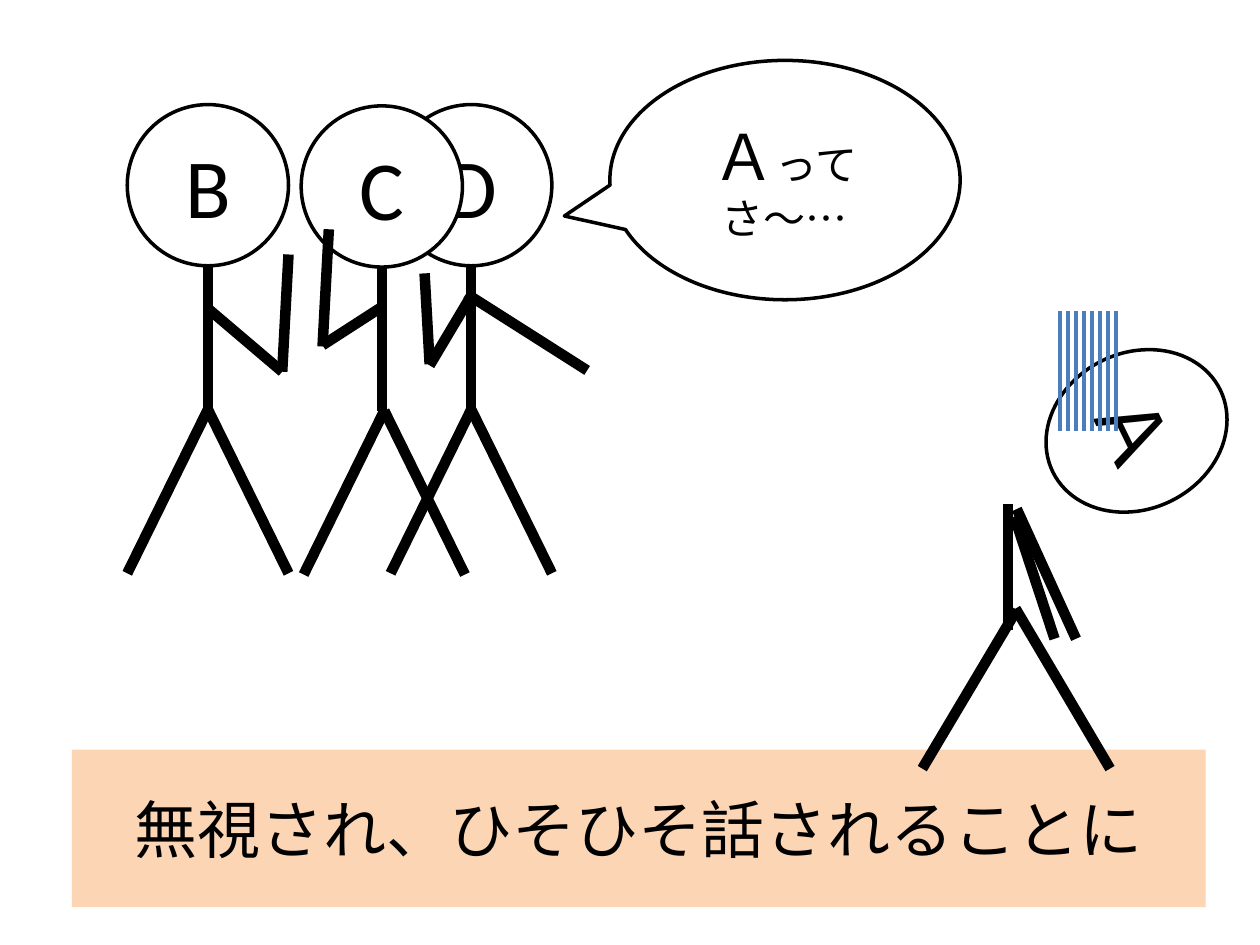
from lxml import etree
from pptx import Presentation
from pptx import util as u
from pptx.dml.color import RGBColor
from pptx.enum import shapes, text
from pptx.oxml import ns

COLORS = {"ink": "000000", "paper": "FFFFFF", "band": "FCD5B5", "gloom": "4B7EBC"}
FONT = "Calibri"
LIMB, OUTLINE, GLOOM = 6, 2, 2.25
HEAD = 1.28
BODY = 1.14
LEG_SPREAD, LEG_DROP = 0.64, 1.3

# Head left and top, hip x, and arms as joint-to-joint chains
WHISPERERS = {
    "D": (3.1, 0.83, 3.74, [[(3.72, 2.38), (3.41, 2.9)], [(3.37, 2.17), (3.41, 2.89)],
                            [(3.7, 2.33), (4.66, 2.94)]]),
    "B": (1.01, 0.83, 1.65, [[(1.64, 2.44), (2.24, 2.95)], [(2.29, 2.02), (2.24, 2.95)]]),
    "C": (2.39, 0.84, 3.05, [[(3.04, 2.43), (2.56, 2.74)], [(2.61, 1.82), (2.56, 2.75)]]),
}
OUTCAST_LIMBS = [
    [(8.07, 4.84), (7.32, 6.1)],
    [(8.06, 4.83), (8.81, 6.1)],
    [(8.05, 4.1), (8.37, 5.07)],
    [(8.07, 4.04), (8.54, 5.07)],
]
OUTCAST_SPINE = [
    [(8.06, 4.83), (8.04, 4.47), (8.03, 4.11), (8.07, 3.92)],
    [(8.07, 3.92), (8.11, 3.73), (8.27, 3.74), (8.32, 3.7)],
    [(8.32, 3.7), (8.37, 3.67), (8.37, 3.69), (8.37, 3.71)],
]


def color(name):
    return RGBColor.from_string(COLORS[name])


def set_line(item, name, width):
    item.line.color.rgb = color(name)
    item.line.width = u.Pt(width)


def add_line(page, start, end, name="ink", width=LIMB):
    ends = [u.Inches(value) for value in (*start, *end)]
    line = page.shapes.add_connector(shapes.MSO_CONNECTOR.STRAIGHT, *ends)
    set_line(line, name, width)
    etree.SubElement(line._element.spPr, ns.qn("a:effectLst"))


def add_label(page, kind, place, spans, fill="paper", outlined=True):
    """Add a filled shape with one centred paragraph of (wording, size) spans."""
    shape = page.shapes.add_shape(kind, *[u.Inches(value) for value in place])
    shape.shadow.inherit = False
    shape.fill.solid()
    shape.fill.fore_color.rgb = color(fill)
    if outlined:
        set_line(shape, "ink", OUTLINE)
    else:
        shape.line.fill.background()
    frame = shape.text_frame
    frame.word_wrap = True
    frame.vertical_anchor = text.MSO_ANCHOR.MIDDLE
    para = frame.paragraphs[0]
    para.alignment = text.PP_ALIGN.CENTER
    for wording, size in spans:
        span = para.add_run()
        span.text = wording
        for name, value in {"name": FONT, "size": u.Pt(size)}.items():
            setattr(span.font, name, value)
        span.font.color.rgb = color("ink")
    return shape


def add_head(page, place, letter):
    kind = shapes.MSO_SHAPE.FLOWCHART_CONNECTOR
    return add_label(page, kind, place, [(letter, 48)])


def add_whisperer(page, letter, left, top, hip_x, arms):
    add_head(page, (left, top, HEAD, HEAD), letter)
    neck_x, neck_y = left + HEAD / 2, top + HEAD
    hip_y = neck_y + BODY
    add_line(page, (neck_x, neck_y), (neck_x, hip_y))
    for side in (-1, 1):
        foot = (hip_x + side * LEG_SPREAD, hip_y + LEG_DROP)
        add_line(page, (hip_x, hip_y), foot)
    for start, end in arms:
        add_line(page, start, end)


def bezier_point(controls, t):
    weights = ((1 - t) ** 3, 3 * t * (1 - t) ** 2, 3 * t * t * (1 - t), t ** 3)
    return tuple(sum(w * point[axis] for w, point in zip(weights, controls))
                 for axis in (0, 1))


def add_curve(page, segments, steps=12):
    """Add an open outline that follows joined cubic segments."""
    points = [bezier_point(controls, step / steps)
              for controls in segments for step in range(1, steps + 1)]
    builder = page.shapes.build_freeform(*segments[0][0], scale=u.Inches(1))
    builder.add_line_segments(points, close=False)
    curve = builder.convert_to_shape()
    curve.shadow.inherit = False
    curve.fill.background()
    set_line(curve, "ink", LIMB)


def add_outcast(page):
    head = add_head(page, (8.4, 2.68, 1.24, 1.48), "Ａ")
    head.rotation = 63.9
    for start, end in OUTCAST_LIMBS:
        add_line(page, start, end)
    add_curve(page, OUTCAST_SPINE)
    first, last, count = 8.41, 8.86, 8
    for index in range(count):
        x = first + index * (last - first) / (count - 1)
        add_line(page, (x, 2.47), (x, 3.42), "gloom", GLOOM)


def main():
    deck = Presentation()
    deck.slide_width, deck.slide_height = u.Inches(10), u.Inches(7.5)
    page = deck.slides.add_slide(deck.slide_layouts[6])
    add_whisperer(page, "D", *WHISPERERS["D"])
    add_label(page, shapes.MSO_SHAPE.RECTANGLE, (0.57, 5.95, 9, 1.25),
              [("無視され、ひそひそ話されることに", 36)], "band", outlined=False)
    add_outcast(page)
    for letter in "BC":
        add_whisperer(page, letter, *WHISPERERS[letter])
    speech = add_label(page, shapes.MSO_SHAPE.OVAL_CALLOUT, (4.84, 0.48, 2.78, 1.9),
                       [("Ａ", 36), ("ってさ～…", 24)])
    speech.adjustments[0], speech.adjustments[1] = -0.63, 0.15
    deck.save("out.pptx")


if __name__ == "__main__":
    main()
